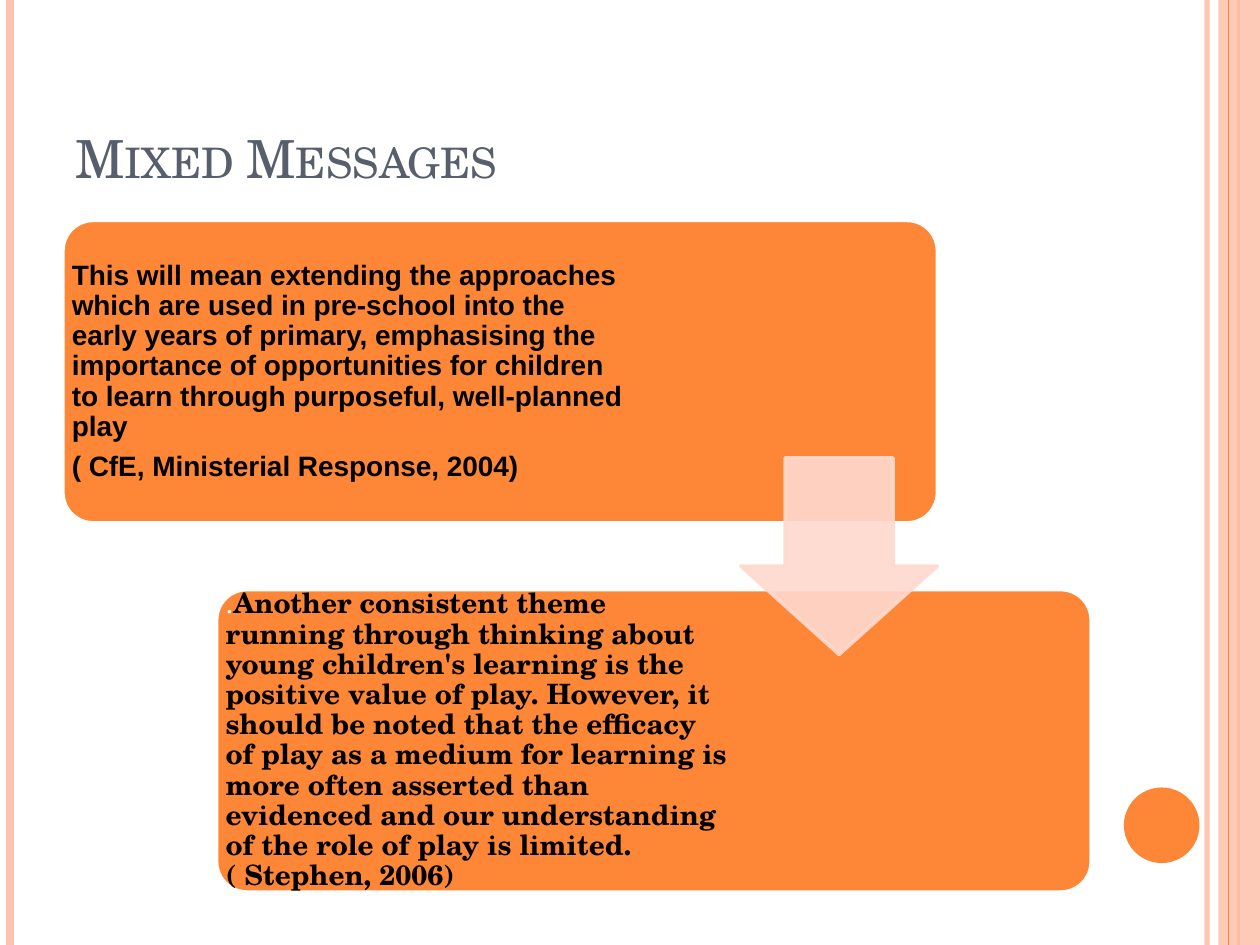
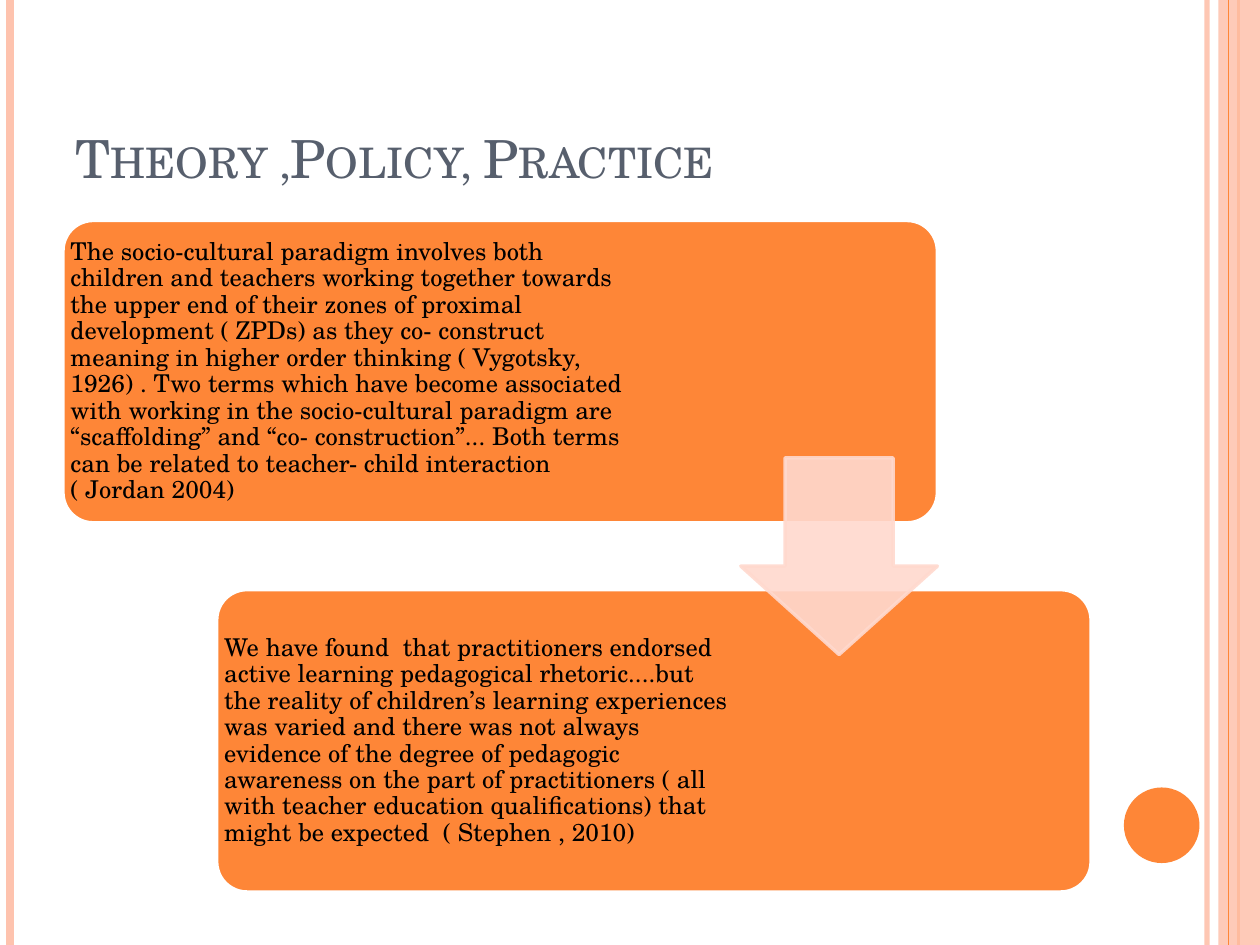
from pptx import Presentation
from pptx import util as u
from pptx.dml.color import RGBColor
from pptx.enum import shapes, text
from pptx.oxml.ns import qn
from lxml import etree

# The grid: 100 columns by 75 rows of square cells on a 10 x 7.5 inch slide
COLUMNS, ROWS = 100, 75
CELL = 0.1

ORANGE, PEACH, PALE = "FE8637", "FEC3AE", "FFD9CE"
SLATE, BLACK, WHITE = "575F6D", "000000", "FFFFFF"
SERIF, SANS = "TeX Gyre Schola", "Arial"

MARGIN = 5
CARD_TOP, CARD_WIDTH, CARD_HEIGHT = 17.5, 69.4, 24
STEP_RIGHT, STEP_DOWN = 12.2, 29.3
ARROW_SIZE = 15.6
TEXT_WIDTHS = (46, 41.6)


def cells(*counts):
    return [u.Inches(count * CELL) for count in counts]


def colour(hex_string):
    return RGBColor.from_string(hex_string)


def fade(element, percent):
    """Make every colour of an element partly transparent."""
    for node in element.iter(qn("a:srgbClr")):
        etree.SubElement(node, qn("a:alpha")).set("val", str(percent * 1000))


class Deck:
    def __init__(self):
        self.presentation = Presentation()
        self.presentation.slide_width, self.presentation.slide_height = cells(COLUMNS, ROWS)
        self.slide = None

    def new_slide(self, title):
        self.slide = self.presentation.slides.add_slide(self.presentation.slide_layouts[6])
        self.side_bands()
        paragraph = [(title, SERIF, SLATE, False)]
        frame = self.text_box((MARGIN, 3, 81.7, 12.5), [paragraph], 30,
                              anchor=text.MSO_ANCHOR.BOTTOM)
        frame.paragraphs[0].runs[0].font._element.set("cap", "small")

    def side_bands(self):
        self.vertical_line(95.8, PEACH, 3, opacity=93)
        self.vertical_line(0.8, PEACH, 4.5)
        self.vertical_line(98.3, ORANGE, 1.5)
        self.shape(shapes.MSO_SHAPE.RECTANGLE, (96.7, 0, 3.3, ROWS), PEACH, opacity=87)
        self.vertical_line(97.5, ORANGE, 0.75)
        self.shape(shapes.MSO_SHAPE.OVAL, (89.2, 62.5, 6, 6), ORANGE)

    def vertical_line(self, column, line_colour, width, opacity=100):
        line = self.slide.shapes.add_connector(
            shapes.MSO_CONNECTOR.STRAIGHT, *cells(column, 0, column, ROWS))
        line.line.color.rgb = colour(line_colour)
        line.line.width = u.Pt(width)
        properties = line._element.spPr
        etree.SubElement(properties, qn("a:effectLst"))
        if opacity < 100:
            fade(properties, opacity)

    def shape(self, kind, box, fill, outline=None, adjustments=(), opacity=100):
        shape = self.slide.shapes.add_shape(kind, *cells(*box))
        shape.shadow.inherit = False
        for index, value in enumerate(adjustments):
            shape.adjustments[index] = value
        shape.fill.solid()
        shape.fill.fore_color.rgb = colour(fill)
        if outline:
            shape.line.color.rgb = colour(outline)
            shape.line.width = u.Pt(2)
        else:
            shape.line.fill.background()
        if opacity < 100:
            fade(shape._element.spPr, opacity)

    def text_box(self, box, paragraphs, size, anchor=text.MSO_ANCHOR.MIDDLE, inset=None):
        """Add paragraphs, each a list of (words, font, colour, bold) runs."""
        frame = self.slide.shapes.add_textbox(*cells(*box)).text_frame
        frame.word_wrap = True
        frame.vertical_anchor = anchor
        if inset is not None:
            for side in ("left", "top", "right", "bottom"):
                setattr(frame, f"margin_{side}", cells(inset)[0])
        for index, runs in enumerate(paragraphs):
            paragraph = frame.add_paragraph() if index else frame.paragraphs[0]
            for words, font, ink, bold in runs:
                run = paragraph.add_run()
                run.text = words
                run.font.name = font
                run.font.size = u.Pt(size)
                run.font.bold = bold
                run.font.color.rgb = colour(ink)
        return frame

    def quote_steps(self, quotes, size, inset):
        """Draw quote cards stepping down to the right, then the arrow between them."""
        for step, (paragraphs, text_width) in enumerate(zip(quotes, TEXT_WIDTHS)):
            left, top = MARGIN + step * STEP_RIGHT, CARD_TOP + step * STEP_DOWN
            self.shape(shapes.MSO_SHAPE.ROUNDED_RECTANGLE,
                       (left, top, CARD_WIDTH, CARD_HEIGHT), ORANGE, WHITE, [0.1])
            frame = self.text_box((left, top, text_width, CARD_HEIGHT), paragraphs, size,
                                  inset=inset)
            for paragraph in frame.paragraphs:
                paragraph.line_spacing = 0.9
                paragraph.space_after = u.Pt(0.35 * size)
        arrow_left = MARGIN + CARD_WIDTH - ARROW_SIZE
        arrow_top = CARD_TOP + (CARD_HEIGHT + STEP_DOWN - ARROW_SIZE) / 2
        self.shape(shapes.MSO_SHAPE.DOWN_ARROW,
                   (arrow_left, arrow_top, ARROW_SIZE, ARROW_SIZE),
                   PALE, PALE, [0.55, 0.45], opacity=90)


def mixed_messages(deck):
    deck.new_slide("Mixed Messages")
    response = [
        [("This will mean extending the approaches which are used in pre-school into the "
          "early years of primary, emphasising the importance of opportunities for children "
          "to learn through purposeful, well-planned play", SANS, BLACK, True)],
        [("( CfE, Ministerial Response, 2004)", SANS, BLACK, True)],
    ]
    value_of_play = [[
        (".", SERIF, WHITE, False),
        ("Another consistent theme running through thinking about young children's learning "
         "is the positive value of play. However, it should be noted that the efficacy of "
         "play as a medium for learning is more often asserted than evidenced and our "
         "understanding of the role of play is limited. ( Stephen, 2006)",
         SERIF, BLACK, True),
    ]]
    deck.quote_steps([response, value_of_play], size=16, inset=0.7)


def theory_policy_practice(deck):
    deck.new_slide("Theory ,Policy, Practice")
    paradigm = [[
        ("The socio-cultural paradigm involves both children and teachers working together "
         "towards the upper end of their zones of proximal development ( ZPDs) as they "
         "co- construct meaning in higher order thinking ( Vygotsky, 1926) . Two terms which "
         "have become associated with working in the socio-cultural paradigm are "
         "“scaffolding” and “co- construction”... Both terms can be related to teacher- "
         "child interaction  ( Jordan 2004)", SERIF, BLACK, False),
    ]]
    findings = [[
        ("We have found  that practitioners endorsed active learning pedagogical "
         "rhetoric....but the reality of children’s learning experiences was varied and "
         "there was not always evidence of the degree of pedagogic awareness on the part of "
         "practitioners ( all with teacher education qualifications) that might be expected  "
         "( Stephen , 2010)", SERIF, BLACK, False),
    ]]
    deck.quote_steps([paradigm, findings], size=14, inset=0.6)


def main():
    deck = Deck()
    mixed_messages(deck)
    theory_policy_practice(deck)
    deck.presentation.save("out.pptx")


if __name__ == "__main__":
    main()
